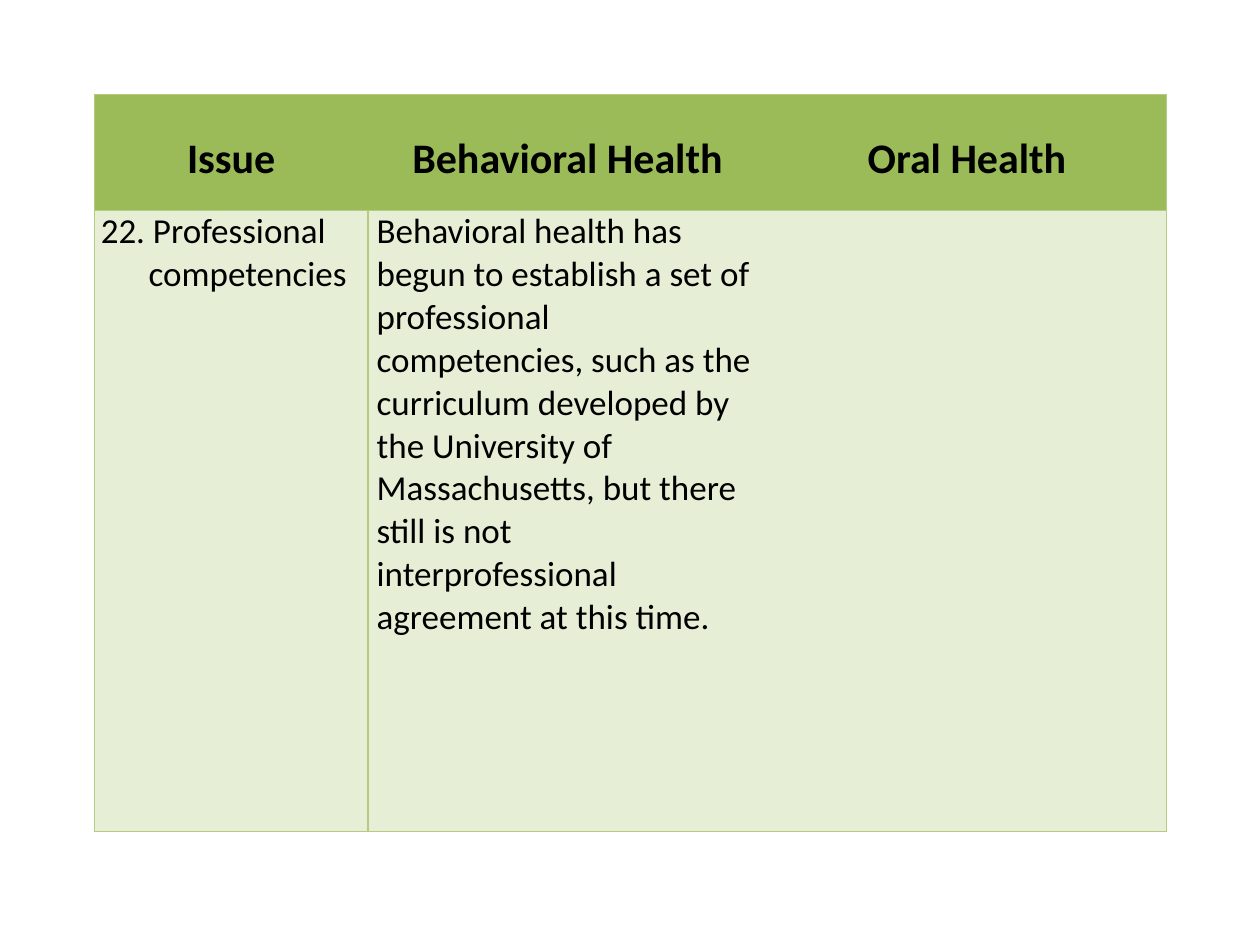
from dataclasses import dataclass

from lxml.etree import SubElement
from pptx import Presentation
from pptx.dml.color import RGBColor as RGB
from pptx.enum.text import MSO_ANCHOR as Anchor, PP_ALIGN as Align
from pptx.oxml.ns import qn
from pptx.util import Pt

EMU_PER_PX = 9144  # 100 px to the inch


@dataclass(frozen=True)
class Theme:
    font: str = "Calibri"
    text: str = "000000"
    header_fill: str = "9BBB59"
    body_fill: str = "E6EED5"
    border: str = "B3CC82"
    header_size: int = 24
    body_size: int = 20
    border_width: int = 1


THEME = Theme()
COLUMNS = (217, 317, 317)
ROWS = (92, 493)
HEADERS = ("Issue", "Behavioral Health", "Oral Health")
BODY = (
    "22. Professional competencies",
    "Behavioral health has begun to establish a set of professional "
    "competencies, such as the curriculum developed by the University of "
    "Massachusetts, but there still is not interprofessional agreement "
    "at this time.",
    "",
)


def px(n):
    return n * EMU_PER_PX


def set_borders(cell, sides):
    """Draw the named sides (of "LRTB") and clear the others."""
    tc_pr = cell._tc.get_or_add_tcPr()
    for i, side in enumerate("LRTB"):
        ln = SubElement(tc_pr, qn(f"a:ln{side}"), w=str(Pt(THEME.border_width)))
        if side in sides:
            fill = SubElement(ln, qn("a:solidFill"))
            SubElement(fill, qn("a:srgbClr"), val=THEME.border)
        else:
            SubElement(ln, qn("a:noFill"))
        tc_pr.insert(i, ln)  # borders precede the fill


def fill_cell(cell, text, color, size, sides, side_margin, top_margin=0, bold=False):
    cell.fill.solid()
    cell.fill.fore_color.rgb = RGB.from_string(color)
    cell.margin_left = cell.margin_right = px(side_margin)
    cell.margin_top, cell.margin_bottom = px(top_margin), 0
    set_borders(cell, sides)
    p = cell.text_frame.paragraphs[0]
    p.text = text
    p.font.name = THEME.font
    p.font.size = Pt(size)
    p.font.bold = bold
    p.font.color.rgb = RGB.from_string(THEME.text)
    return p


def hang_indent(p, indent):
    p_pr = p._p.get_or_add_pPr()
    p_pr.set("marL", str(px(indent)))
    p_pr.set("indent", str(-px(indent)))


def add_header_row(table):
    for cell, text, sides in zip(table.rows[0].cells, HEADERS, ("LTB", "TB", "RTB")):
        p = fill_cell(cell, text, THEME.header_fill, THEME.header_size, sides,
                      side_margin=5, top_margin=10, bold=True)
        p.alignment = Align.CENTER
        cell.vertical_anchor = Anchor.MIDDLE


def add_body_row(table):
    cells = table.rows[1].cells
    for cell, text, sides, margin in zip(cells, BODY, ("LRTB", "LTB", "RTB"), (5, 7, 7)):
        p = fill_cell(cell, text, THEME.body_fill, THEME.body_size, sides, margin)
        if cell is not None and text == BODY[0]:
            hang_indent(p, 38)


def add_comparison_table(slide):
    frame = slide.shapes.add_table(len(ROWS), len(COLUMNS), px(75), px(75),
                                   px(sum(COLUMNS)), px(sum(ROWS)))
    table = frame.table
    for column, width in zip(table.columns, COLUMNS):
        column.width = px(width)
    for row, height in zip(table.rows, ROWS):
        row.height = px(height)
    add_header_row(table)
    add_body_row(table)


def main():
    prs = Presentation()
    prs.slide_width, prs.slide_height = px(1000), px(750)
    slide = prs.slides.add_slide(prs.slide_layouts[6])
    add_comparison_table(slide)
    prs.save("out.pptx")


if __name__ == "__main__":
    main()
